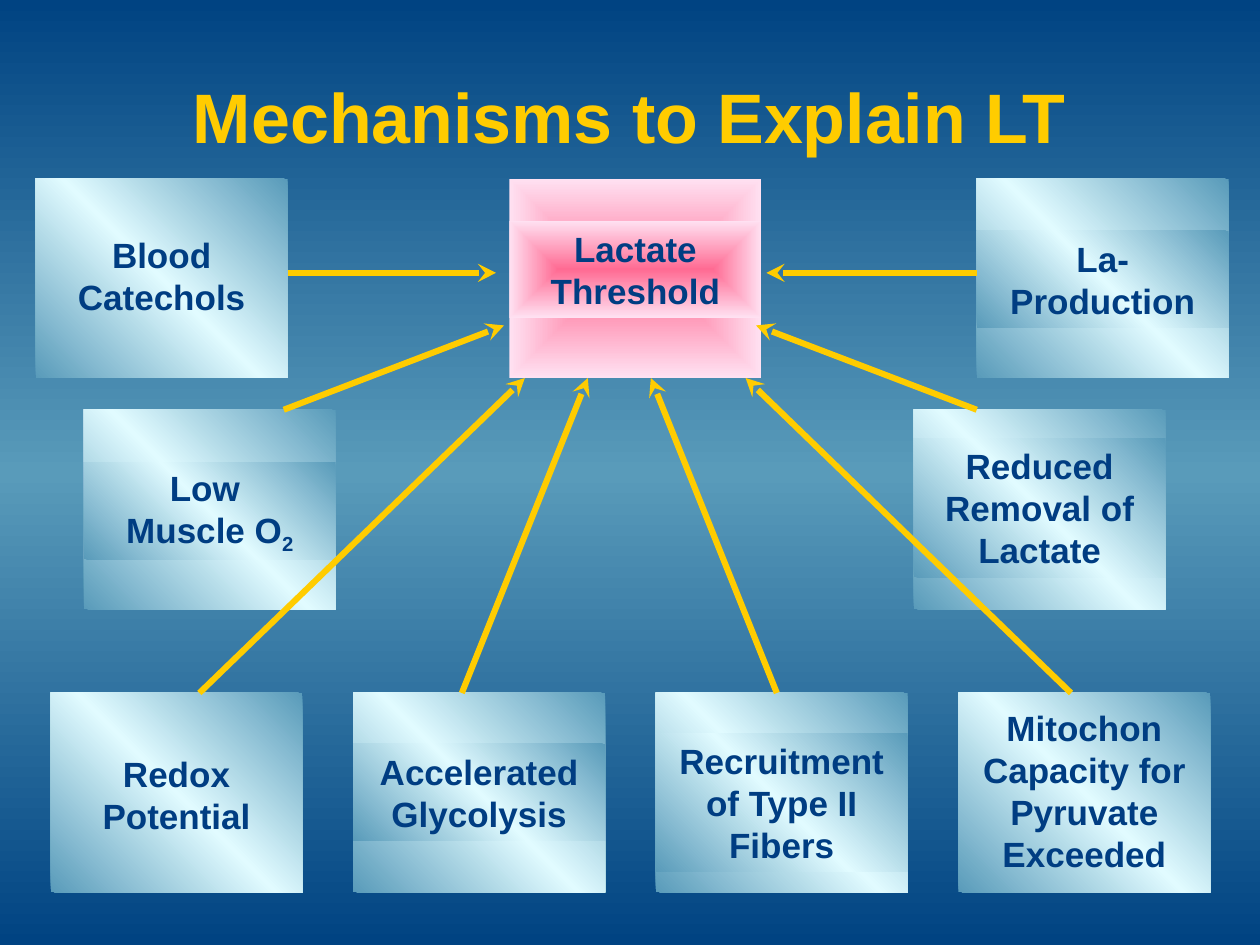
from dataclasses import dataclass

import pptx
import pptx.dml.color
import pptx.enum.shapes
import pptx.enum.text
import pptx.oxml
import pptx.oxml.ns
import pptx.util
from pptx.util import Cm

NAVY, GOLD = "003D82", "FFCC00"
BACKDROP = [(0, "004382"), (50, "599BBA"), (100, "004382")]
ICE = [(0, "599BBA"), (50, "E1FBFF"), (100, "599BBA")]
PINK = [(0, "FF6B93"), (100, "FFE1F2")]
DIAGONAL = '<a:lin ang="18900000" scaled="1"/>'
VERTICAL = '<a:lin ang="5400000" scaled="1"/>'
FROM_CENTRE = ('<a:path path="shape"><a:fillToRect l="50000" t="50000" '
               'r="50000" b="50000"/></a:path>')
CARD_WIDTH, CARD_HEIGHT = 5.08, 4.02
TOP_ROW, MIDDLE_ROW, BOTTOM_ROW = 3.6, 8.26, 13.97
BOTTOM_LEFTS = [1.02 + 6.1 * column for column in range(4)]


@dataclass
class Card:
    text: str
    left: float
    top: float
    label_top: float
    lines: int = 2
    label_filled: bool = True
    subscript: str = ""
    stops: tuple = tuple(ICE)
    direction: str = DIAGONAL


@dataclass
class Arrow:
    start: tuple[float, float]
    end: tuple[float, float]


CARDS = [
    Card("Redox Potential", BOTTOM_LEFTS[0], BOTTOM_ROW, 15.04, label_filled=False),
    Card("Accelerated Glycolysis", BOTTOM_LEFTS[1], BOTTOM_ROW, 14.99),
    Card("Recruitment of Type II Fibers", BOTTOM_LEFTS[2], BOTTOM_ROW, 14.78, lines=3),
    Card("Mitochon Capacity for Pyruvate Exceeded", BOTTOM_LEFTS[3], BOTTOM_ROW,
         14.12, lines=4, label_filled=False),
    Card("La- Production", 19.69, TOP_ROW, 4.65),
    Card("Blood Catechols", 0.72, TOP_ROW, 4.57, label_filled=False),
    Card("Lactate Threshold", 10.27, TOP_ROW, 4.45, stops=tuple(PINK),
         direction=FROM_CENTRE),
    Card("Reduced Removal of Lactate", 18.42, MIDDLE_ROW, 8.84, lines=3),
    Card("Low \nMuscle O", 1.69, MIDDLE_ROW, 9.32, subscript="2"),
]

ARROWS = [
    Arrow((5.8, 5.5), (10, 5.5)),
    Arrow((19.69, 5.5), (15.45, 5.5)),
    Arrow((4.02, 13.97), (10.58, 7.62)),
    Arrow((21.59, 13.97), (15.03, 7.62)),
    Arrow((9.31, 13.97), (11.85, 7.62)),
    Arrow((15.66, 13.97), (13.12, 7.62)),
    Arrow((5.72, 8.26), (10.16, 6.56)),
    Arrow((19.69, 8.26), (15.24, 6.56)),
]


def color(value: str) -> pptx.dml.color.RGBColor:
    return pptx.dml.color.RGBColor.from_string(value)


def set_gradient(fill, element, stops, direction: str) -> None:
    """Fill with any number of stops, along a line or from the centre."""
    fill.gradient()
    old = element.find(".//" + pptx.oxml.ns.qn("a:gradFill"))
    stop_xml = "".join(
        f'<a:gs pos="{position * 1000}"><a:srgbClr val="{value}"/></a:gs>'
        for position, value in stops)
    new = pptx.oxml.parse_xml(
        f'<a:gradFill {pptx.oxml.ns.nsdecls("a")} rotWithShape="1">'
        f"<a:gsLst>{stop_xml}</a:gsLst>{direction}</a:gradFill>")
    old.getparent().replace(old, new)


def add_panel(slide, left: float, top: float, height: float, card: Card):
    panel = slide.shapes.add_shape(
        pptx.enum.shapes.MSO_SHAPE.RECTANGLE,
        Cm(left), Cm(top), Cm(CARD_WIDTH), Cm(height))
    panel.shadow.inherit = False
    panel.line.fill.background()
    set_gradient(panel.fill, panel.element, card.stops, card.direction)
    return panel


def write(shape, text: str, *, size: float, ink: str, subscript: str = "",
          line_spacing: float = 1.0) -> None:
    frame = shape.text_frame
    frame.word_wrap = True
    frame.vertical_anchor = pptx.enum.text.MSO_ANCHOR.MIDDLE
    paragraph = frame.paragraphs[0]
    paragraph.alignment = pptx.enum.text.PP_ALIGN.CENTER
    paragraph.line_spacing = line_spacing
    for index, line in enumerate(text.split("\n")):
        if index:
            paragraph.add_line_break()
        paragraph.add_run().text = line
    if subscript:
        lowered = paragraph.add_run()
        lowered.text = subscript
        lowered.font._element.set("baseline", "-25000")
    for run in paragraph.runs:
        run.font.name = "Arial"
        run.font.size = pptx.util.Pt(size)
        run.font.bold = True
        run.font.color.rgb = color(ink)


def add_card(slide, card: Card) -> None:
    add_panel(slide, card.left, card.top, CARD_HEIGHT, card)
    label_height = 0.28 + 0.84 * card.lines
    if card.label_filled:
        label = add_panel(slide, card.left, card.label_top, label_height, card)
    else:
        label = slide.shapes.add_textbox(
            Cm(card.left), Cm(card.label_top), Cm(CARD_WIDTH), Cm(label_height))
    write(label, card.text, size=20, ink=NAVY, subscript=card.subscript)


def add_arrow(slide, arrow: Arrow) -> None:
    connector = slide.shapes.add_connector(
        pptx.enum.shapes.MSO_CONNECTOR.STRAIGHT,
        *(Cm(value) for value in arrow.start + arrow.end))
    connector.line.color.rgb = color(GOLD)
    connector.line.width = pptx.util.Pt(3.5)
    namespace = pptx.oxml.ns.nsdecls("a")
    connector.line._get_or_add_ln().append(
        pptx.oxml.parse_xml(f'<a:tailEnd {namespace} type="stealth"/>'))
    connector.element.spPr.append(
        pptx.oxml.parse_xml(f"<a:effectLst {namespace}/>"))


def main() -> None:
    deck = pptx.Presentation()
    deck.slide_width, deck.slide_height = Cm(25.4), Cm(19.05)
    slide = deck.slides.add_slide(deck.slide_layouts[6])
    set_gradient(slide.background.fill, slide.element, BACKDROP, VERTICAL)

    # Mechanisms around the threshold
    for card in CARDS:
        add_card(slide, card)

    # Title
    title = slide.shapes.add_textbox(Cm(2.21), Cm(0.84), Cm(20.96), Cm(3.18))
    write(title, "Mechanisms to Explain LT", size=40, ink=GOLD, line_spacing=0.9)

    # Arrows pointing to the threshold
    for arrow in ARROWS:
        add_arrow(slide, arrow)

    deck.save("out.pptx")


if __name__ == "__main__":
    main()
